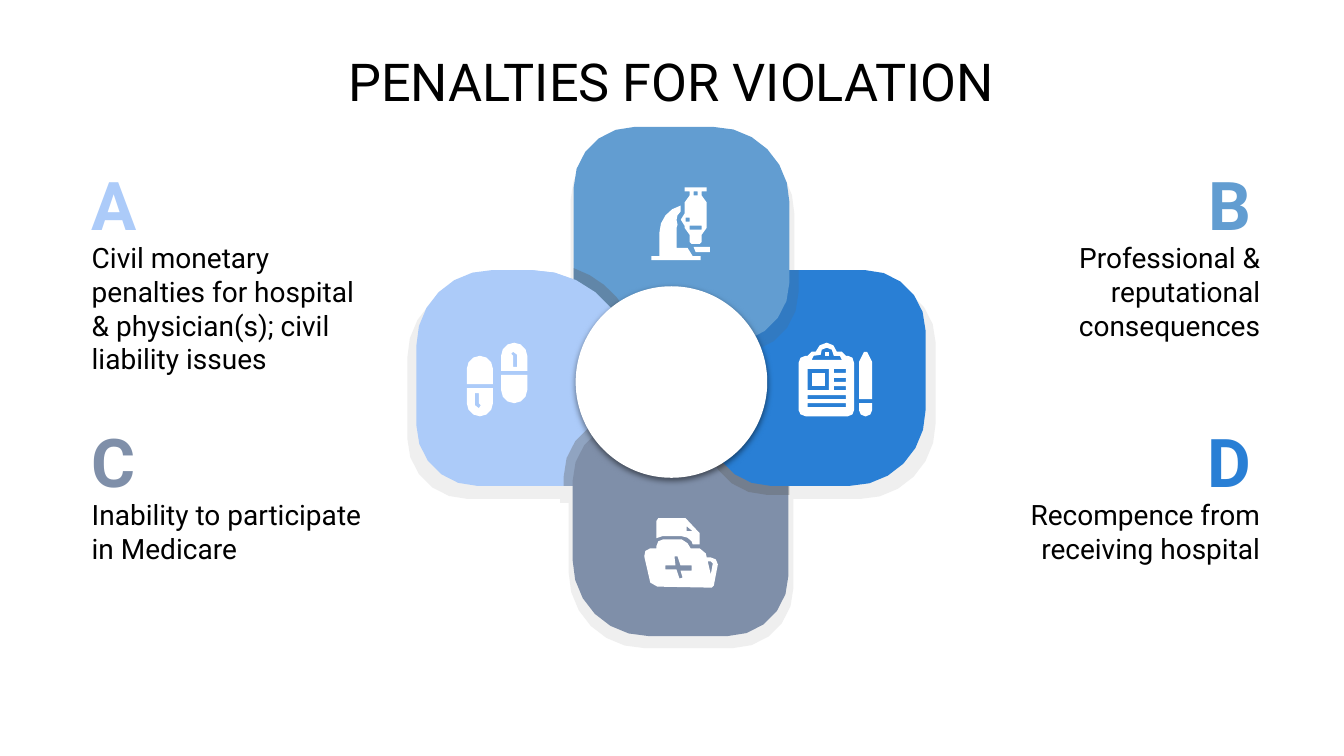
import math
from dataclasses import dataclass

from lxml import etree
from pptx import Presentation
from pptx import util as u
from pptx.dml.color import RGBColor
from pptx.enum import shapes, text
from pptx.oxml import ns

Point = tuple[float, float]
Contour = list[Point]

FONT = "Roboto"
BLACK, WHITE, SHADE, BACKDROP = "000000", "FFFFFF", "606060", "EFEFEF"
SKY, BLUE, SLATE, ROYAL = "ACCBF9", "629DD1", "7F8FA9", "297FD5"
INSET = 0.13
PETAL = 2.14


@dataclass
class Penalty:
    letter: str
    description: str
    color: str
    top: float
    on_right: bool


@dataclass
class Layer:
    outline: list[Contour]
    color: str
    opacity: int = 100


def rgb(color: str) -> RGBColor:
    return RGBColor.from_string(color)


def curve_steps(span: float) -> int:
    return max(1, round(7 * math.sqrt(span)))


def bezier(start: Point, first: Point, second: Point, end: Point) -> Contour:
    curve = []
    steps = curve_steps(max(abs(end[0] - start[0]), abs(end[1] - start[1])))
    for step in range(1, steps + 1):
        t = step / steps
        weights = ((1 - t) ** 3, 3 * t * (1 - t) ** 2, 3 * t * t * (1 - t), t ** 3)
        controls = (start, first, second, end)
        curve.append(tuple(sum(w * p[axis] for w, p in zip(weights, controls)) for axis in (0, 1)))
    return curve


def trace(path: str) -> list[Contour]:
    contours, controls, command = [], [], "M"
    for token in path.split():
        if token in "MLC":
            command = token
            continue
        x, y = token.split(",")
        point = (float(x), float(y))
        if command == "M":
            contours.append([point])
        elif command == "L":
            contours[-1].append(point)
        else:
            controls.append(point)
            if len(controls) == 3:
                contours[-1] += bezier(contours[-1][-1], *controls)
                controls = []
    return contours


def rounded(left: float, top: float, width: float, height: float,
            tl: float = 0, tr: float = 0, br: float = 0, bl: float = 0) -> list[Contour]:
    right, bottom = left + width, top + height
    corners = ((left + tl, top + tl, tl, 180), (right - tr, top + tr, tr, 270),
               (right - br, bottom - br, br, 0), (left + bl, bottom - bl, bl, 90))
    contour = []
    for x, y, radius, start in corners:
        steps = curve_steps(radius)
        for step in range(steps + 1 if radius else 1):
            angle = math.radians(start + 90 * step / steps)
            contour.append((x + radius * math.cos(angle), y + radius * math.sin(angle)))
    return [contour]


def bar(left: float, top: float, width: float) -> list[Contour]:
    return rounded(left, top, width, 0.04)


def style(shape, color: str, opacity: int = 100) -> None:
    shape.shadow.inherit = False
    shape.fill.solid()
    shape.fill.fore_color.rgb = rgb(color)
    shape.line.fill.background()
    if opacity < 100:
        tint = shape._element.spPr.find(".//" + ns.qn("a:srgbClr"))
        etree.SubElement(tint, ns.qn("a:alpha"), val=str(opacity * 1000))


def draw(canvas, layer: Layer) -> None:
    contours = [[(u.Inches(x), u.Inches(y)) for x, y in contour] for contour in layer.outline]
    builder = canvas.build_freeform(*contours[0][0], scale=1.0)
    builder.add_line_segments(contours[0][1:], close=True)
    for contour in contours[1:]:
        builder.move_to(*contour[0])
        builder.add_line_segments(contour[1:], close=True)
    style(builder.convert_to_shape(), layer.color, layer.opacity)


def write(box, wording: str, size: float, color: str, align, bold: bool = False):
    frame = box.text_frame
    frame.word_wrap = True
    frame.auto_size = text.MSO_AUTO_SIZE.NONE
    frame.vertical_anchor = text.MSO_ANCHOR.TOP
    frame.margin_left = frame.margin_right = u.Inches(INSET)
    frame.margin_top = frame.margin_bottom = u.Inches(INSET)
    frame.text = wording
    paragraph = frame.paragraphs[0]
    paragraph.alignment = align
    font = paragraph.font
    font.name, font.size, font.bold = FONT, u.Pt(size), bold
    font.color.rgb = rgb(color)
    return paragraph


def add_penalty(slide, penalty: Penalty) -> None:
    align = text.PP_ALIGN.RIGHT if penalty.on_right else text.PP_ALIGN.LEFT
    letter_left, description_left, width = (10.63, 9.73, 2.9) if penalty.on_right else (0.78, 0.78, 3.0)
    letter = slide.shapes.add_textbox(
        u.Inches(letter_left), u.Inches(penalty.top), u.Inches(1.91), u.Inches(0.56))
    write(letter, penalty.letter, 48, penalty.color, align, True).line_spacing = 1.15
    description = slide.shapes.add_textbox(
        u.Inches(description_left), u.Inches(penalty.top + 0.89), u.Inches(width), u.Inches(1.2))
    write(description, penalty.description, 20, BLACK, align)


def add_hub(slide) -> None:
    hub = slide.shapes.add_shape(
        shapes.MSO_SHAPE.OVAL, u.Inches(5.71), u.Inches(2.84), u.Inches(1.9), u.Inches(1.9))
    style(hub, WHITE)
    effects = hub._element.spPr.find(ns.qn("a:effectLst"))
    shadow = etree.SubElement(effects, ns.qn("a:outerShdw"), blurRad=str(u.Pt(4.5)),
                              dist=str(u.Pt(1.5)), dir="5400000", algn="bl", rotWithShape="0")
    tint = etree.SubElement(shadow, ns.qn("a:srgbClr"), val=BLACK)
    etree.SubElement(tint, ns.qn("a:alpha"), val="50000")


PENALTIES = [
    Penalty("A", "Civil monetary penalties for hospital & physician(s); civil liability issues", SKY, 1.37, False),
    Penalty("B", "Professional & reputational consequences", BLUE, 1.37, True),
    Penalty("C", "Inability to participate in Medicare", SLATE, 3.92, False),
    Penalty("D", "Recompence from receiving hospital", ROYAL, 3.92, True),
]

PETALS = [
    Layer(rounded(5.66, 1.38, 2.22, 3.0, tl=0.6, tr=0.75), BACKDROP),
    Layer(rounded(4.04, 2.8, 5.24, 2.15, tl=0.75, tr=0.6, br=0.75, bl=0.6), BACKDROP),
    Layer(rounded(5.64, 4.3, 2.23, 2.13, br=0.6, bl=0.75), BACKDROP),
    Layer(rounded(5.55, 4.8, 0.2, 0.19), BACKDROP),
    Layer(rounded(4.13, 2.68, PETAL, PETAL, tl=0.75, tr=1, bl=0.6), SKY),
    Layer(rounded(5.59, 4.13, 0.88, 0.69, tl=0.6), SHADE, 36),
    Layer(rounded(5.68, 4.17, PETAL, PETAL, tl=0.6, br=0.6, bl=0.75), SLATE),
    Layer(rounded(7.01, 4.03, 0.82, 0.88, bl=0.6), SHADE, 36),
    Layer(rounded(7.04, 2.68, PETAL, PETAL, tr=0.6, br=0.75, bl=0.6), ROYAL),
    Layer(rounded(7.04, 2.68, 0.88, 0.82, br=0.6), SHADE, 16),
    Layer(rounded(5.69, 1.26, PETAL, PETAL, tl=0.6, tr=0.75, br=0.6), BLUE),
    Layer(trace("M 5.69,2.66 L 5.69,3.41 6.34,3.41 C 6.27,3.06 6.02,2.77 5.69,2.66"), SHADE, 36),
    Layer(rounded(4.8, 2.68, 1.48, 1.29, tl=0.48, tr=1), SKY),
]

PILLS = [
    rounded(4.63, 3.53, 0.26, 0.28, tl=0.13, tr=0.13),
    rounded(4.97, 3.72, 0.26, 0.28, br=0.13, bl=0.13),
    rounded(4.63, 3.85, 0.26, 0.28, br=0.13, bl=0.13)
    + trace("M 4.71,3.9 L 4.75,3.9 4.75,4 4.77,4.02 4.75,4.05 4.71,4.02"),
    rounded(4.97, 3.4, 0.26, 0.28, tl=0.13, tr=0.13)
    + trace("M 5.09,3.49 L 5.13,3.52 5.13,3.64 5.09,3.64 5.09,3.53 5.07,3.51"),
]
MICROSCOPE = [
    trace("M 6.79,1.86 L 6.79,1.9 6.84,1.9 6.84,1.94 6.79,2.01 6.79,2.12 C 6.74,2.14 6.74,2.22 6.79,2.24 "
          "L 6.79,2.26 6.84,2.33 6.84,2.4 6.86,2.42 6.94,2.42 6.96,2.4 6.96,2.33 7.01,2.26 7.01,2.01 6.96,1.94 "
          "6.96,1.9 7.01,1.9 7.01,1.86")
    + rounded(6.88, 1.9, 0.04, 0.04) + bar(6.8, 2.16, 0.04) + bar(6.84, 2.24, 0.12),
    trace("M 6.88,2.45 L 6.9,2.5 7.04,2.5 7.04,2.45"),
    trace("M 6.75,2.04 C 6.63,2.07 6.54,2.18 6.54,2.31 L 6.54,2.54 6.46,2.54 6.46,2.58 6.95,2.58 6.95,2.54 "
          "6.87,2.54 6.82,2.46 6.71,2.46 6.71,2.26 6.72,2.23 C 6.7,2.18 6.71,2.13 6.75,2.1"),
]
FOLDER = [
    trace("M 6.53,5.14 L 6.51,5.17 6.51,5.34 6.57,5.32 6.76,5.32 C 6.8,5.32 6.84,5.34 6.86,5.37 "
          "L 6.87,5.4 6.94,5.4 6.94,5.29 6.8,5.14 M 6.81,5.22 L 6.87,5.27 6.81,5.27"),
    trace("M 6.58,5.35 C 6.54,5.35 6.51,5.38 6.51,5.42 L 6.51,5.44 6.45,5.44 C 6.41,5.44 6.38,5.48 6.39,5.52 "
          "L 6.45,5.78 6.52,5.82 7.06,5.83 7.08,5.81 7.12,5.6 C 7.12,5.56 7.09,5.53 7.05,5.53 L 7.01,5.53 7,5.49 "
          "6.94,5.44 6.85,5.44 6.82,5.39 6.76,5.35 M 7.05,5.57 L 7.07,5.59 7.05,5.7 7.02,5.57 "
          "M 6.69,5.52 L 6.72,5.52 6.75,5.61 6.86,5.61 6.86,5.66 6.75,5.66 6.77,5.73 6.74,5.74 6.71,5.65 "
          "6.6,5.65 6.6,5.61 6.7,5.61"),
]
CLIPBOARD = [
    bar(8.18, 3.49, 0.04),
    rounded(8.05, 3.7, 0.13, 0.13),
    trace("M 8.2,3.4 C 8.15,3.4 8.1,3.44 8.09,3.49 L 8.05,3.49 8.01,3.53 7.99,3.53 C 7.95,3.53 7.92,3.56 7.92,3.6 "
          "L 7.92,4.07 C 7.92,4.1 7.95,4.13 7.99,4.13 L 8.41,4.13 C 8.45,4.13 8.47,4.1 8.47,4.07 L 8.47,3.6 "
          "C 8.47,3.56 8.45,3.53 8.41,3.53 L 8.39,3.53 8.35,3.49 8.3,3.49 C 8.29,3.44 8.25,3.4 8.2,3.4 "
          "M 8.2,3.45 L 8.25,3.47 8.27,3.53 8.33,3.53 8.35,3.57 8.05,3.57 8.07,3.53 8.14,3.52 8.15,3.47")
    + rounded(8.01, 3.66, 0.21, 0.21)
    + bar(8.27, 3.66, 0.12) + bar(8.27, 3.75, 0.12) + bar(8.27, 3.83, 0.12)
    + bar(8.01, 3.92, 0.38) + bar(8.01, 4, 0.38),
    trace("M 8.57,3.49 L 8.52,3.59 8.52,3.96 8.65,3.96 8.65,3.59 8.6,3.49"),
    rounded(8.52, 4, 0.13, 0.13, br=0.06, bl=0.06),
]


def main() -> None:
    deck = Presentation()
    deck.slide_width, deck.slide_height = u.Inches(13.33), u.Inches(7.5)
    slide = deck.slides.add_slide(deck.slide_layouts[5])
    title = slide.shapes.title
    title.left, title.top, title.width, title.height = map(u.Inches, (0.45, 0.36, 12.42, 0.84))
    write(title, "PENALTIES FOR VIOLATION", 37.3, BLACK, text.PP_ALIGN.CENTER)
    for penalty in PENALTIES:
        add_penalty(slide, penalty)
    for layer in PETALS:
        draw(slide.shapes, layer)
    add_hub(slide)
    for icon in (PILLS, MICROSCOPE, FOLDER, CLIPBOARD):
        group = slide.shapes.add_group_shape()
        for outline in icon:
            draw(group.shapes, Layer(outline, WHITE))
    deck.save("out.pptx")


if __name__ == "__main__":
    main()
